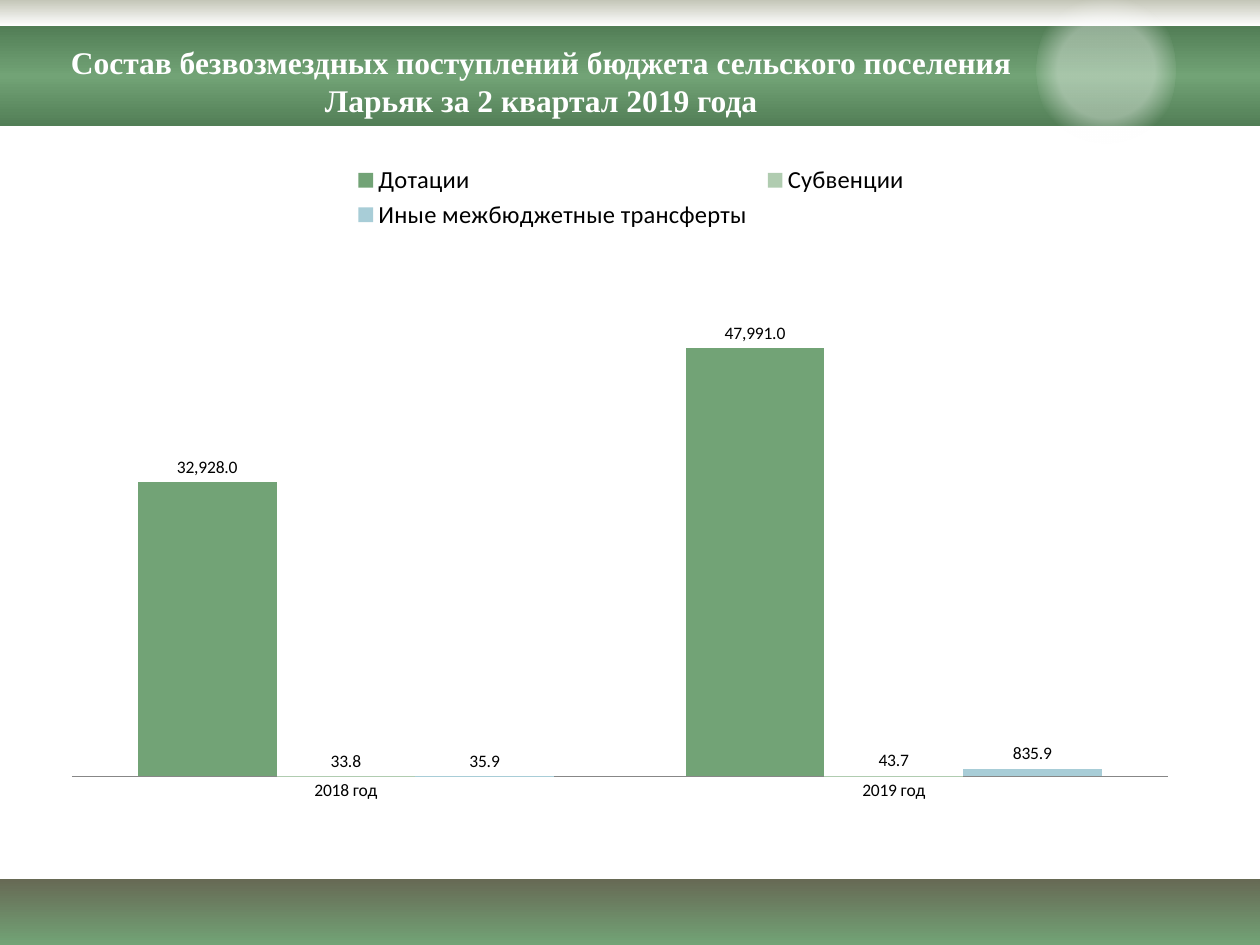
from pptx import Presentation
from pptx.chart.data import CategoryChartData
from pptx.dml.color import RGBColor
from pptx.enum.chart import XL_CHART_TYPE as ChartType
from pptx.enum.chart import XL_LABEL_POSITION as LabelPosition
from pptx.enum.chart import XL_LEGEND_POSITION as LegendPosition
from pptx.enum.chart import XL_TICK_MARK as TickMark
from pptx.enum.shapes import MSO_SHAPE as Shape
from pptx.enum.text import MSO_ANCHOR as Anchor
from pptx.enum.text import PP_ALIGN as Align
from pptx.oxml import parse_xml
from pptx.oxml.ns import nsdecls, qn
from pptx.util import Cm, Pt

COLORS = {
    "green": "72A376", "dark_green": "527E56", "olive": "676A55",
    "stone": "C4C6B8", "white": "FFFFFF", "black": "000000",
    "light_green": "B0CCB0", "light_blue": "A8CDD7", "axis": "878787",
}
PAGE_WIDTH, PAGE_HEIGHT = 25.4, 19.05
NUMBER_FORMAT = "#,##0.0"
YEARS = ["2018 год", "2019 год"]
SERIES = [
    ("Дотации", (32928, 47991), "green"),
    ("Субвенции", (33.8, 43.7), "light_green"),
    ("Иные межбюджетные трансферты", (35.9, 835.9), "light_blue"),
]
LINEAR = '<a:lin ang="5400000" scaled="0"/>'
RADIAL = ('<a:path path="circle"><a:fillToRect l="50000" t="50000" '
          'r="50000" b="50000"/></a:path>')


def rgb(name):
    return RGBColor.from_string(COLORS[name])


def add_gradient_shape(page, kind, box, stops, direction=LINEAR):
    """Add a borderless shape; stops are (position %, colour, opacity %)."""
    shape = page.shapes.add_shape(kind, *map(Cm, box))
    shape.shadow.inherit = False
    shape.line.fill.background()
    stop_xml = "".join(
        f'<a:gs pos="{position * 1000}"><a:srgbClr val="{COLORS[color]}">'
        f'<a:alpha val="{opacity * 1000}"/></a:srgbClr></a:gs>'
        for position, color, opacity in stops)
    gradient = parse_xml(
        f'<a:gradFill {nsdecls("a")} rotWithShape="1">'
        f'<a:gsLst>{stop_xml}</a:gsLst>{direction}</a:gradFill>')
    shape.element.spPr.find(qn("a:prstGeom")).addnext(gradient)


def add_backdrop(page, width, height):
    bands = [
        (17.73, height - 17.73, [(0, "olive", 100), (100, "green", 100)]),
        (0, 0.53, [(0, "stone", 100), (100, "white", 100)]),
        (0.53, 2.01, [(0, "dark_green", 100), (50, "green", 100),
                      (100, "dark_green", 100)]),
    ]
    for top, band_height, stops in bands:
        add_gradient_shape(page, Shape.RECTANGLE,
                           (0, top, width, band_height), stops)
    add_gradient_shape(page, Shape.OVAL, (20.9, -0.28, 2.8, 3.4),
                       [(44, "white", 38), (67, "white", 0)], RADIAL)


def add_title(page, box):
    frame = page.shapes.add_textbox(*map(Cm, box)).text_frame
    frame.word_wrap = True
    frame.vertical_anchor = Anchor.TOP
    frame.text = ("Состав безвозмездных поступлений бюджета сельского "
                  "поселения Ларьяк за 2 квартал 2019 года")
    para = frame.paragraphs[0]
    para.alignment = Align.CENTER
    font = para.runs[0].font
    font.name, font.size, font.bold = "Times New Roman", Pt(18), True
    font.color.rgb = rgb("white")


def manual_layout(x, y, width, height, inner=False):
    """Return a chart layout given in fractions of the chart's size."""
    target = '<c:layoutTarget val="inner"/>' if inner else ""
    return parse_xml(
        f'<c:layout {nsdecls("c")}><c:manualLayout>{target}'
        '<c:xMode val="edge"/><c:yMode val="edge"/>'
        f'<c:x val="{x}"/><c:y val="{y}"/><c:w val="{width}"/>'
        f'<c:h val="{height}"/></c:manualLayout></c:layout>')


def style_axes(chart):
    years = chart.category_axis
    years.major_tick_mark = years.minor_tick_mark = TickMark.NONE
    years.format.line.color.rgb = rgb("axis")
    years.format.line.width = Pt(0.75)
    amounts = chart.value_axis
    amounts.minimum_scale, amounts.maximum_scale = 0, 60000
    amounts.has_major_gridlines = False
    amounts.tick_labels.number_format = NUMBER_FORMAT
    amounts.tick_labels.number_format_is_linked = False
    amounts.visible = False


def style_legend(chart):
    chart.has_legend = True
    legend = chart.legend
    legend.position = LegendPosition.TOP
    legend.include_in_layout = False
    legend.font.size = Pt(14)
    legend.font.name = "Calibri"
    legend.font.color.rgb = rgb("black")
    element = legend._element
    for layout in element.findall(qn("c:layout")):
        element.remove(layout)
    element.find(qn("c:legendPos")).addnext(
        manual_layout(0.26, 0.02, 0.5, 0.11))


def add_transfer_chart(page, box):
    data = CategoryChartData(number_format=NUMBER_FORMAT)
    data.categories = YEARS
    for name, values, _ in SERIES:
        data.add_series(name, values)
    chart = page.shapes.add_chart(
        ChartType.COLUMN_CLUSTERED, *map(Cm, box), data).chart
    chart.has_title = False
    chart.font.name, chart.font.size = "Calibri", Pt(10)
    chart.font.color.rgb = rgb("black")
    style_axes(chart)
    style_legend(chart)

    plot = chart.plots[0]
    plot.gap_width, plot.overlap, plot.vary_by_categories = 95, 0, False
    for series, (_, _, color) in zip(plot.series, SERIES):
        series.format.fill.solid()
        series.format.fill.fore_color.rgb = rgb(color)
        labels = series.data_labels
        labels.show_value = True
        labels.number_format = NUMBER_FORMAT
        labels.number_format_is_linked = False
        labels.position = LabelPosition.OUTSIDE_END

    plot_area = chart.element.find(".//" + qn("c:plotArea"))
    for layout in plot_area.findall(qn("c:layout")):
        plot_area.remove(layout)
    plot_area.insert(0, manual_layout(0.02, 0.14, 0.96, 0.8, inner=True))


def main():
    deck = Presentation()
    deck.slide_width, deck.slide_height = Cm(PAGE_WIDTH), Cm(PAGE_HEIGHT)
    page = deck.slides.add_slide(deck.slide_layouts[6])
    add_backdrop(page, PAGE_WIDTH, PAGE_HEIGHT)
    add_title(page, (0.28, 0.74, 21.26, 1.8))
    add_transfer_chart(page, (0.99, 2.97, 23.01, 13.49))
    deck.save("out.pptx")


if __name__ == "__main__":
    main()
